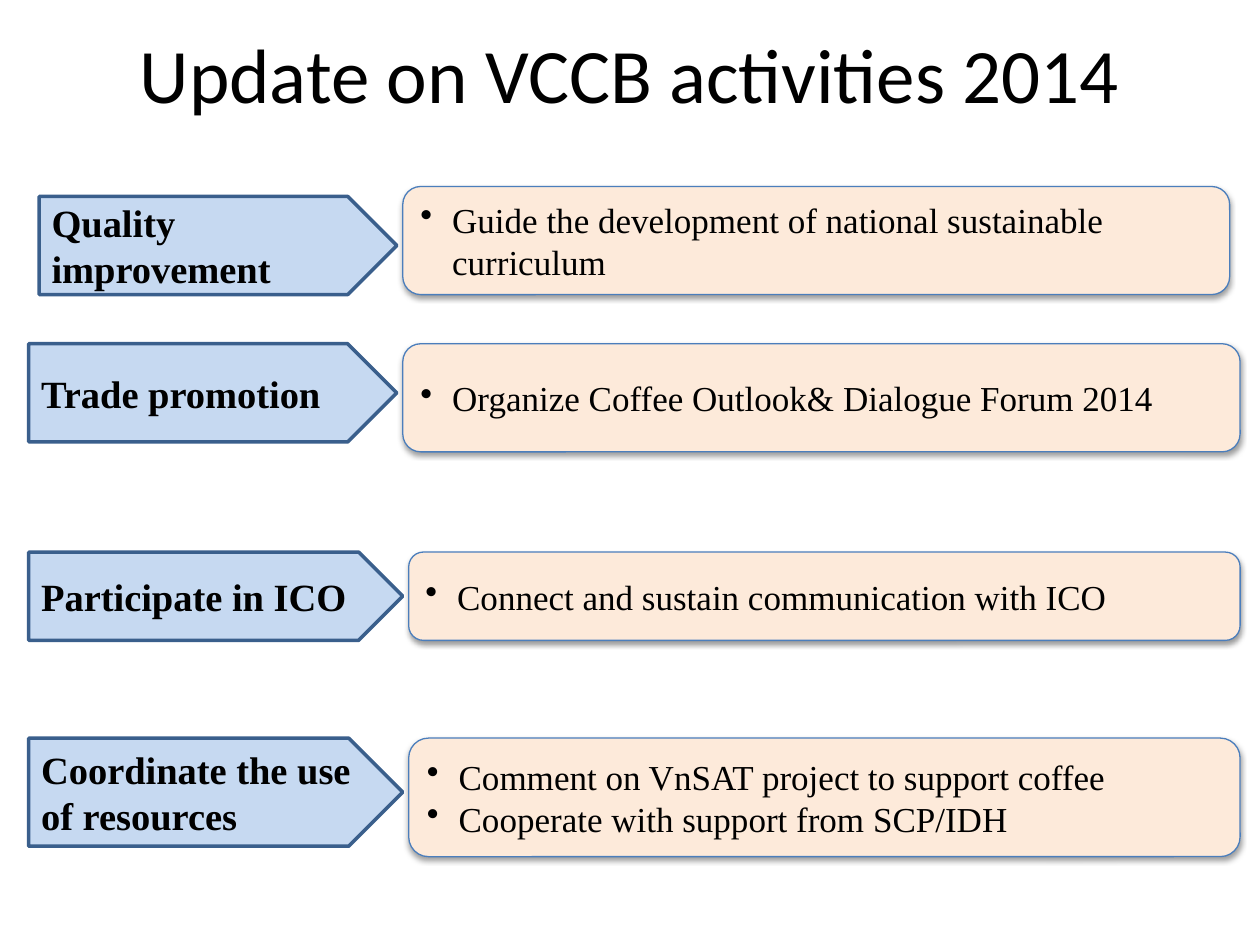
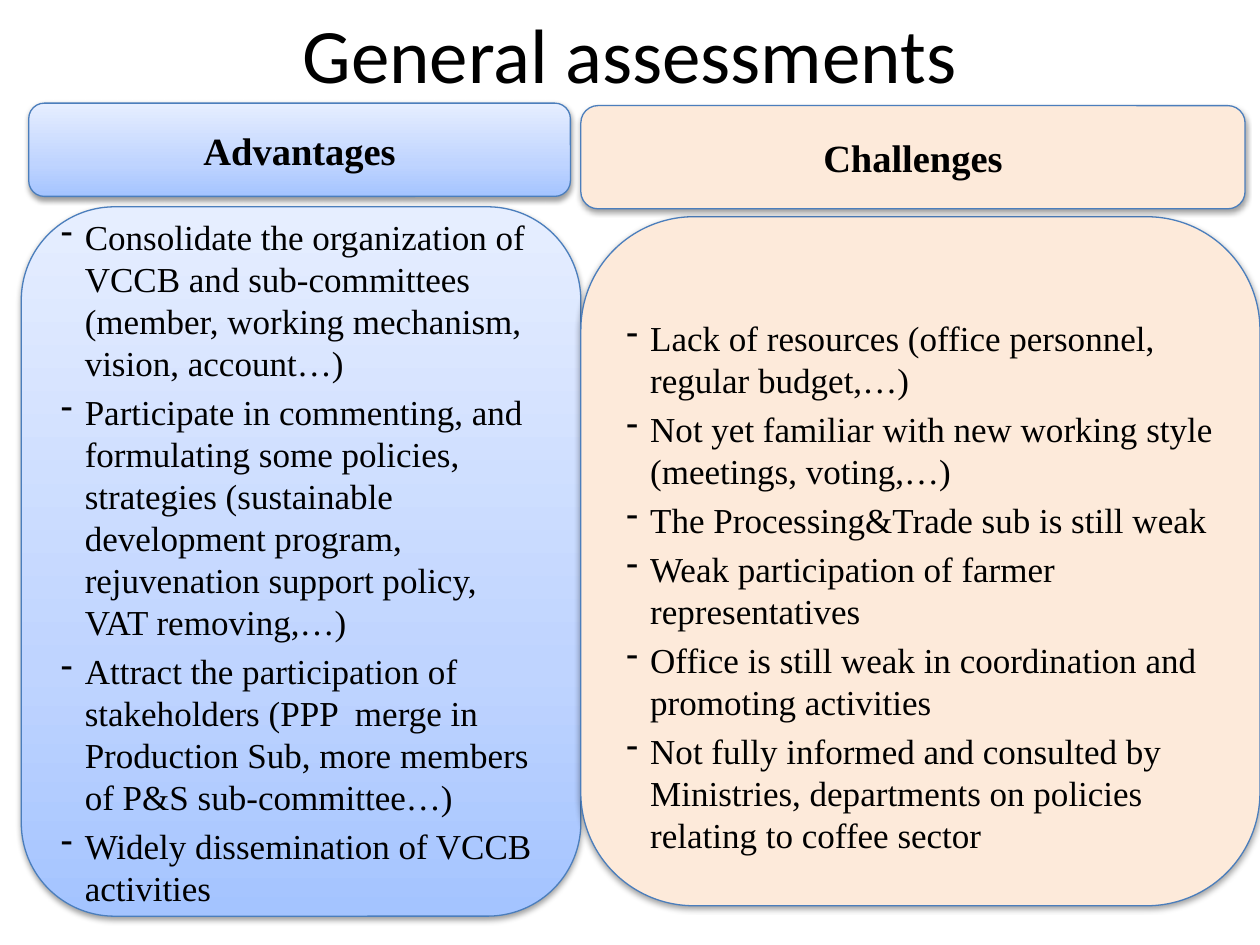
from pptx import Presentation, oxml, util as u
from pptx.dml.color import RGBColor
from pptx.enum import shapes, text
from pptx.oxml import ns

COLORS = {
    "black": "000000",
    "tab": "C6D9F1",
    "tab line": "3A5F8C",
    "peach": "FDEADA",
    "box line": "4B7EBC",
}
BLUE_STOPS = [(0, "A4C4FF"), (35, "BFD4FF"), (100, "E6EEFF")]
TITLE_FONT, BODY_FONT = "Calibri", "Times New Roman"
TITLE_LEFT, TITLE_WIDTH = 1.27, 22.86
HEADING_SIZE, LIST_SIZE = 22, 20

# All lengths are in centimetres.
ACTIVITIES = {
    "title": "Update on VCCB activities 2014",
    "title top": 0.15,
    "title height": 2.62,
    "tab gap": 0.12,
    # tab: left, top, tip, height; box: top, right, height
    "rows": [
        {"label": "Quality improvement",
         "items": ["Guide the development of national sustainable curriculum"],
         "tab": (0.79, 3.96, 8.0, 1.98), "box": (3.76, 24.79, 2.18)},
        {"label": "Trade promotion",
         "items": ["Organize Coffee Outlook& Dialogue Forum 2014"],
         "tab": (0.58, 6.93, 8.0, 1.98), "box": (6.93, 25, 2.18)},
        {"label": "Participate in ICO",
         "items": ["Connect and sustain communication with ICO"],
         "tab": (0.58, 11.13, 8.12, 1.78), "box": (11.13, 25, 1.78)},
        {"label": "Coordinate the use of resources",
         "items": ["Comment on VnSAT project to support coffee",
                   "Cooperate with support from SCP/IDH"],
         "tab": (0.58, 14.88, 8.12, 2.18), "box": (14.88, 25, 2.39)},
    ],
}

ASSESSMENTS = {
    "title": "General assessments",
    "title top": 0,
    "title height": 2.11,
    # header and panel: left, top, width, height
    "columns": [
        {"heading": "Advantages", "fill": BLUE_STOPS, "top inset": 0.13,
         "header": (0.58, 2.08, 10.92, 1.88), "panel": (0.43, 4.17, 11.28, 14.3),
         "items": [
             "Consolidate the organization of VCCB and sub-committees "
             "(member, working mechanism, vision, account…)",
             "Participate in commenting, and formulating some policies, strategies "
             "(sustainable development program, rejuvenation support policy, "
             "VAT removing,…)",
             "Attract the participation of stakeholders (PPP  merge in Production Sub, "
             "more members of P&S sub-committee…)",
             "Widely dissemination of VCCB activities",
         ]},
        {"heading": "Challenges", "fill": COLORS["peach"], "top inset": 1.12,
         "header": (11.71, 2.13, 13.39, 2.08), "panel": (11.71, 4.37, 13.69, 13.89),
         "items": [
             "Lack of resources (office personnel, regular budget,…)",
             "Not yet familiar with new working style (meetings, voting,…)",
             "The Processing&Trade sub is still weak",
             "Weak participation of farmer representatives",
             "Office is still weak in coordination and promoting activities",
             "Not fully informed and consulted by Ministries, departments on policies "
             "relating to coffee sector",
         ]},
    ],
}


def rgb(name):
    return RGBColor.from_string(COLORS[name])


def format_runs(paragraph, font, size, bold=False):
    for run in paragraph.runs:
        run.font.name = font
        run.font.size = u.Pt(size)
        run.font.bold = bold
        run.font.color.rgb = rgb("black")


def add_titled_slide(presentation, content):
    slide = presentation.slides.add_slide(presentation.slide_layouts[5])
    title = slide.shapes.title
    title.left, title.top = u.Cm(TITLE_LEFT), u.Cm(content["title top"])
    title.width, title.height = u.Cm(TITLE_WIDTH), u.Cm(content["title height"])
    title.text_frame.text = content["title"]
    title.text_frame.vertical_anchor = text.MSO_ANCHOR.MIDDLE
    format_runs(title.text_frame.paragraphs[0], TITLE_FONT, 44)
    return slide


def fill_shape(shape, fill):
    """Fill with one hex colour, or with gradient stops running upwards."""
    if isinstance(fill, str):
        shape.fill.solid()
        shape.fill.fore_color.rgb = RGBColor.from_string(fill)
        return
    stops = "".join(
        f'<a:gs pos="{percent * 1000}"><a:srgbClr val="{color}"/></a:gs>'
        for percent, color in fill)
    geometry = shape.element.spPr.find(ns.qn("a:prstGeom"))
    geometry.addnext(oxml.parse_xml(
        f'<a:gradFill {ns.nsdecls("a")} rotWithShape="1"><a:gsLst>{stops}</a:gsLst>'
        '<a:lin ang="16200000" scaled="0"/></a:gradFill>'))


def add_block(slide, preset, place, fill, line, line_width):
    shape = slide.shapes.add_shape(preset, *map(u.Cm, place))
    fill_shape(shape, fill)
    shape.line.color.rgb = rgb(line)
    shape.line.width = u.Pt(line_width)
    shape.shadow.inherit = False
    return shape


def add_tab(slide, place):
    return add_block(slide, shapes.MSO_SHAPE.PENTAGON, place,
                     COLORS["tab"], "tab line", 2)


def add_box(slide, place, fill):
    """Add a rounded box with a soft shadow below it."""
    box = add_block(slide, shapes.MSO_SHAPE.ROUNDED_RECTANGLE, place,
                    fill, "box line", 0.75)
    box.element.spPr.find(ns.qn("a:effectLst")).append(oxml.parse_xml(
        f'<a:outerShdw {ns.nsdecls("a")} blurRad="40000" dist="20000" dir="5400000"'
        ' rotWithShape="0"><a:srgbClr val="000000"><a:alpha val="38000"/></a:srgbClr>'
        '</a:outerShdw>'))
    return box


def write_heading(shape, heading, alignment, space_before=0):
    shape.text_frame.text = heading
    paragraph = shape.text_frame.paragraphs[0]
    paragraph.alignment = alignment
    paragraph.space_before = u.Pt(space_before)
    format_runs(paragraph, BODY_FONT, HEADING_SIZE, bold=True)


def write_list(shape, items, bullet, indent, space_before=0):
    shape.text_frame.text = "\n".join(items)
    for paragraph in shape.text_frame.paragraphs:
        paragraph.alignment = text.PP_ALIGN.LEFT
        paragraph.space_before = u.Pt(space_before)
        format_runs(paragraph, BODY_FONT, LIST_SIZE)
        properties = paragraph._p.get_or_add_pPr()
        properties.set("marL", str(u.Cm(indent)))
        properties.set("indent", str(-u.Cm(indent)))
        properties.append(oxml.parse_xml(
            f'<a:buChar {ns.nsdecls("a")} char="{bullet}"/>'))


def build_activities(presentation):
    slide = add_titled_slide(presentation, ACTIVITIES)
    for row in ACTIVITIES["rows"]:
        left, top, tip, height = row["tab"]
        tab = add_tab(slide, (left, top, tip - left, height))
        write_heading(tab, row["label"], text.PP_ALIGN.LEFT)

        box_left = tip + ACTIVITIES["tab gap"]
        box_top, right, box_height = row["box"]
        box = add_box(slide, (box_left, box_top, right - box_left, box_height),
                      COLORS["peach"])
        write_list(box, row["items"], "•", indent=0.64)


def build_assessments(presentation):
    slide = add_titled_slide(presentation, ASSESSMENTS)
    for column in ASSESSMENTS["columns"]:
        panel = add_box(slide, column["panel"], column["fill"])
        panel.text_frame.margin_top = u.Cm(column["top inset"])
        write_list(panel, column["items"], "-", indent=0.48, space_before=4)
    for column in ASSESSMENTS["columns"]:
        header = add_box(slide, column["header"], column["fill"])
        write_heading(header, column["heading"], text.PP_ALIGN.CENTER, space_before=4)


def main():
    presentation = Presentation()
    presentation.slide_width, presentation.slide_height = u.Cm(25.4), u.Cm(19.05)
    build_activities(presentation)
    build_assessments(presentation)
    presentation.save("out.pptx")


if __name__ == "__main__":
    main()
